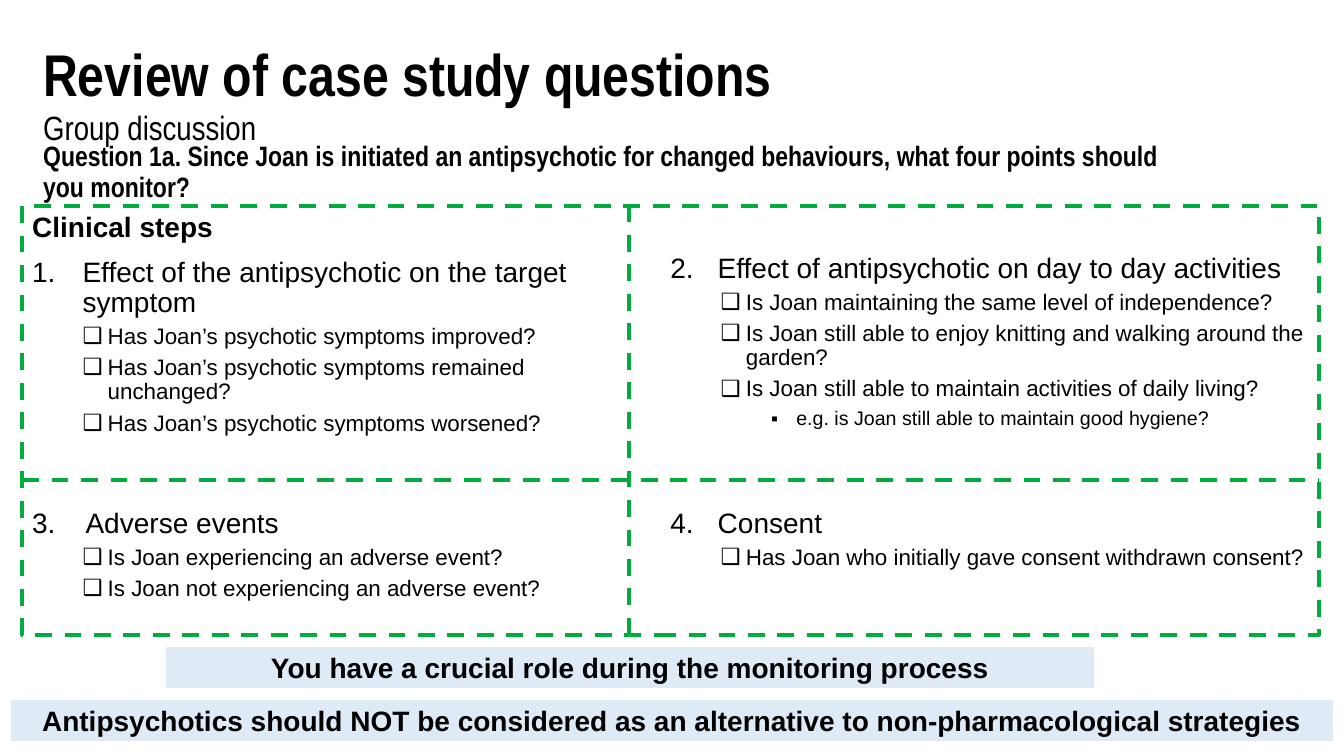
"""Builds the case study review slide with four monitoring points."""
import pptx
import pptx.dml.color
import pptx.enum.dml
import pptx.enum.shapes
import pptx.enum.text
import pptx.oxml.ns
import pptx.util
from lxml import etree

COLOURS = {"text": "000000", "grid": "00AC3E", "banner": "DEEBF7", "edge": "FFFFFF"}
HEADINGS = [
    ("Review of case study questions", 42, True, (0.33, 0.36, 10.78, 0.81)),
    ("Group discussion", 24, False, (0.33, 1.03, 8.15, 0.51)),
    ("Question 1a. Since Joan is initiated an antipsychotic for changed behaviours, "
     "what four points should you monitor?", 20, True, (0.33, 1.39, 11.33, 0.65)),
]
STEPS_TITLE = "Clinical steps"
POINTS = [
    {"number": 1, "column": 0, "row": 0, "drop": 0.03, "indent": 0.5,
     "title": "Effect of the antipsychotic on the target symptom",
     "checks": ["Has Joan’s psychotic symptoms improved?",
                "Has Joan’s psychotic symptoms remained unchanged?",
                "Has Joan’s psychotic symptoms worsened?"]},
    {"number": 2, "column": 1, "row": 0, "drop": 0.43, "indent": 0.47,
     "title": "Effect of antipsychotic on day to day activities",
     "checks": ["Is Joan maintaining the same level of independence?",
                "Is Joan still able to enjoy knitting and walking around the garden?",
                "Is Joan still able to maintain activities of daily living?"],
     "example": "e.g. is Joan still able to maintain good hygiene?"},
    {"number": 3, "column": 0, "row": 1, "drop": 0.24, "indent": 0.53,
     "title": "Adverse events",
     "checks": ["Is Joan experiencing an adverse event?",
                "Is Joan not experiencing an adverse event?"]},
    {"number": 4, "column": 1, "row": 1, "drop": 0.24, "indent": 0.47,
     "title": "Consent",
     "checks": ["Has Joan who initially gave consent withdrawn consent?"]},
]
BANNERS = [
    ("You have a crucial role during the monitoring process", (1.63, 6.4, 9.24, 0.44)),
    ("Antipsychotics should NOT be considered as an alternative to "
     "non-pharmacological strategies", (0.09, 6.93, 13.15, 0.44)),
]
LEFT, MIDDLE, RIGHT = 0.22, 6.24, 13.08
ROWS = (2.04, 4.76, 6.3)
COLUMNS = ((LEFT, MIDDLE), (6.55, RIGHT))


def inches(*lengths):
    return [pptx.util.Inches(length) for length in lengths]


def colour(name):
    return pptx.dml.color.RGBColor.from_string(COLOURS[name])


def add_box(slide, place, anchor):
    frame = slide.shapes.add_textbox(*inches(*place)).text_frame
    frame.word_wrap = True
    frame.vertical_anchor = anchor
    return frame


def write(frame, text, size, bold=False, font="Arial", spacing=0.9, before=0,
          indent=None, bullet=None, level=0):
    used = bool(frame.paragraphs[0].runs)
    paragraph = frame.add_paragraph() if used else frame.paragraphs[0]
    paragraph.level = level
    paragraph.line_spacing = spacing
    paragraph.space_before = pptx.util.Pt(before if used else 0)
    if bullet:
        properties = paragraph._p.get_or_add_pPr()
        margin, hanging = inches(*indent)
        properties.set("marL", str(margin))
        properties.set("indent", str(-hanging))
        tag, attributes = bullet
        etree.SubElement(properties, pptx.oxml.ns.qn("a:buFont"), typeface="Arial")
        etree.SubElement(properties, pptx.oxml.ns.qn(tag), attributes)
    run = paragraph.add_run()
    run.text = text
    run.font.name = font
    run.font.size = pptx.util.Pt(size)
    run.font.bold = bold
    run.font.color.rgb = colour("text")
    return paragraph


def style_dashes(line):
    line.color.rgb = colour("grid")
    line.width = pptx.util.Pt(3)
    line.dash_style = pptx.enum.dml.MSO_LINE.DASH


def add_grid(slide):
    frame = slide.shapes.add_shape(
        pptx.enum.shapes.MSO_SHAPE.RECTANGLE,
        *inches(LEFT, ROWS[0], RIGHT - LEFT, ROWS[2] - ROWS[0]))
    frame.shadow.inherit = False
    frame.fill.background()
    style_dashes(frame.line)
    for ends in ((MIDDLE, ROWS[0], MIDDLE, ROWS[2]), (LEFT, ROWS[1], RIGHT, ROWS[1])):
        divider = slide.shapes.add_connector(
            pptx.enum.shapes.MSO_CONNECTOR.STRAIGHT, *inches(*ends))
        style_dashes(divider.line)
        etree.SubElement(divider._element.spPr, pptx.oxml.ns.qn("a:effectLst"))


def add_point(slide, point):
    left, right = COLUMNS[point["column"]]
    top = ROWS[point["row"]] + point["drop"]
    bottom = ROWS[point["row"] + 1]
    frame = add_box(slide, (left, top, right - left, bottom - top),
                    pptx.enum.text.MSO_ANCHOR.TOP)
    if point["number"] == 1:
        write(frame, STEPS_TITLE, 20, bold=True)
    numbering = {"type": "arabicPeriod", "startAt": str(point["number"])}
    write(frame, point["title"], 20, before=10, indent=(point["indent"],) * 2,
          bullet=("a:buAutoNum", numbering))
    for check in point["checks"]:
        write(frame, check, 16, before=5, indent=(0.75, 0.25),
              bullet=("a:buChar", {"char": "❑"}), level=1)
    if "example" in point:
        write(frame, point["example"], 14, before=5, indent=(1.25, 0.25),
              bullet=("a:buChar", {"char": "▪"}), level=2)


def add_banner(slide, text, place):
    banner = slide.shapes.add_shape(
        pptx.enum.shapes.MSO_SHAPE.RECTANGLE, *inches(*place))
    banner.shadow.inherit = False
    banner.fill.solid()
    banner.fill.fore_color.rgb = colour("banner")
    banner.line.color.rgb = colour("edge")
    banner.line.width = pptx.util.Pt(2.25)
    banner.text_frame.word_wrap = True
    paragraph = write(banner.text_frame, text, 20, bold=True, spacing=1.0)
    paragraph.alignment = pptx.enum.text.PP_ALIGN.CENTER


def main():
    presentation = pptx.Presentation()
    presentation.slide_width, presentation.slide_height = inches(13.33, 7.5)
    slide = presentation.slides.add_slide(presentation.slide_layouts[6])
    for text, size, bold, place in HEADINGS:
        frame = add_box(slide, place, pptx.enum.text.MSO_ANCHOR.MIDDLE)
        write(frame, text, size, bold, font="Arial Narrow")
    add_grid(slide)
    for point in POINTS:
        add_point(slide, point)
    for text, place in BANNERS:
        add_banner(slide, text, place)
    presentation.save("out.pptx")


if __name__ == "__main__":
    main()
